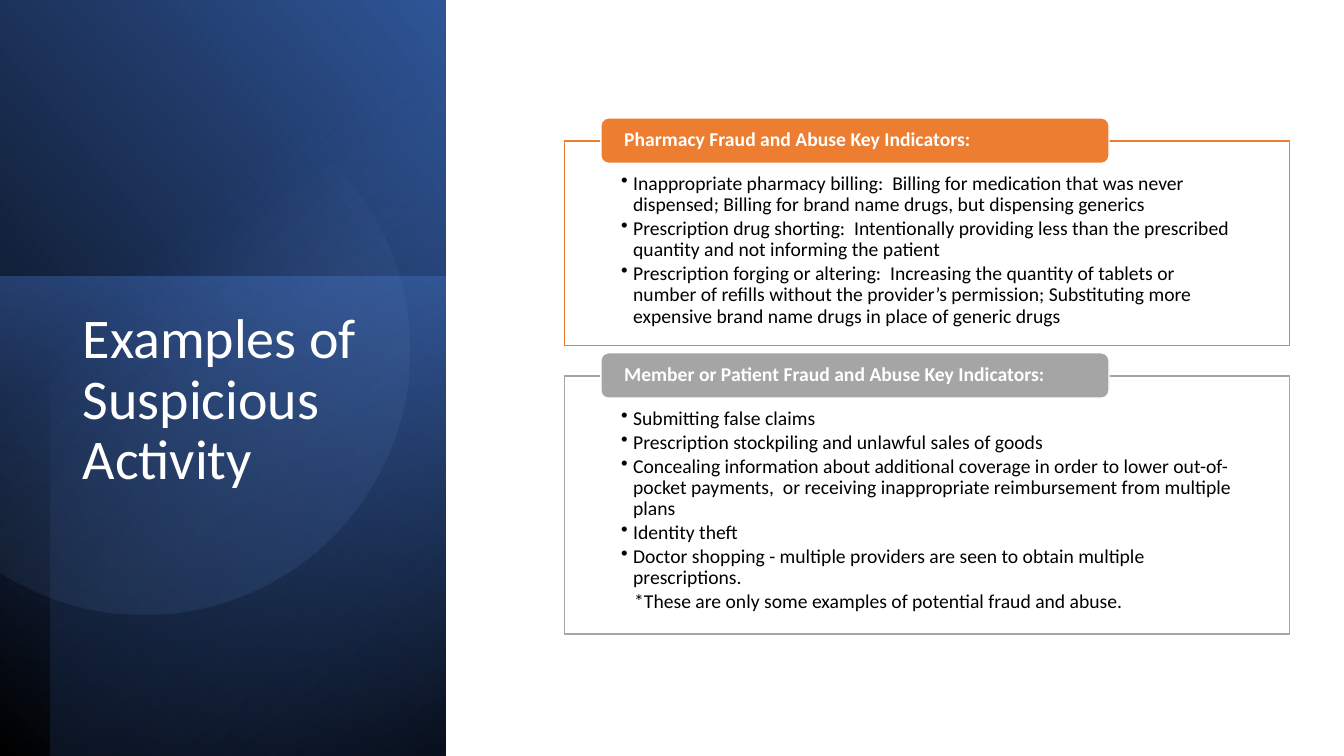
from math import acos, cos, sin

from pptx import Presentation
from pptx.dml.color import RGBColor
from pptx.enum.shapes import MSO_SHAPE
from pptx.enum.text import MSO_ANCHOR, PP_ALIGN
from pptx.oxml import parse_xml
from pptx.oxml.ns import nsdecls, qn
from pptx.util import Inches, Pt

RECT, ROUNDED = MSO_SHAPE.RECTANGLE, MSO_SHAPE.ROUNDED_RECTANGLE
TOP, MIDDLE, LEFT = MSO_ANCHOR.TOP, MSO_ANCHOR.MIDDLE, PP_ALIGN.LEFT
WHITE = RGBColor(0xFF, 0xFF, 0xFF)
BLACK = RGBColor(0x00, 0x00, 0x00)
ORANGE = RGBColor(0xED, 0x7D, 0x31)
GRAY = RGBColor(0xA5, 0xA5, 0xA5)
NAVY = RGBColor(0x20, 0x38, 0x64)
DEEP_BLUE = RGBColor(0x2F, 0x55, 0x97)
BLUE = RGBColor(0x44, 0x72, 0xC4)
PALE_BLUE = RGBColor(0x8F, 0xAA, 0xDC)


def fill_gradient(shape, stops, angle):
    """Stops are (position %, colour, opacity %); the angle is in degrees."""
    shape.shadow.inherit = False
    shape.line.fill.background()
    shape.fill.background()
    stop_xml = "".join(
        f'<a:gs pos="{pos * 1000}"><a:srgbClr val="{color}">'
        f'<a:alpha val="{opacity * 1000}"/></a:srgbClr></a:gs>'
        for pos, color, opacity in stops)
    gradient = parse_xml(
        f'<a:gradFill {nsdecls("a")} rotWithShape="1"><a:gsLst>{stop_xml}</a:gsLst>'
        f'<a:lin ang="{round(angle * 60000)}" scaled="0"/></a:gradFill>')
    properties = shape._element.spPr
    properties.replace(properties.find(qn("a:noFill")), gradient)


def write_paragraph(paragraph, text, size, color, bold=False):
    paragraph.text = text
    paragraph.alignment = LEFT
    paragraph.line_spacing = 0.9
    font_format = {"name": "Calibri", "size": Pt(size), "bold": bold}
    for attribute, value in font_format.items():
        setattr(paragraph.runs[0].font, attribute, value)
    paragraph.runs[0].font.color.rgb = color


prs = Presentation()
prs.slide_width, prs.slide_height = Inches(13.33), Inches(7.5)
slide = prs.slides.add_slide(prs.slide_layouts[5])
shapes = slide.shapes

# Blue side panel: frame before turning, rotation, mirrored, stops, angle
side_layers = [
    ((-1.55, 1.55, 7.52, 4.42), 90, True,
     [(0, BLACK, 100), (100, DEEP_BLUE, 100)], 310),
    ((-0.17, 2.91, 4.76, 4.42), 270, False,
     [(0, BLUE, 50), (100, NAVY, 0)], 190),
    ((-1.29, 1.79, 7.5, 3.92), 270, True,
     [(0, BLACK, 59), (69, BLUE, 0)], 220),
]
for frame, rotation, mirrored, stops, angle in side_layers:
    layer = shapes.add_shape(RECT, *map(Inches, frame))
    layer.rotation = rotation
    if mirrored:
        layer._element.spPr.xfrm.set("flipH", "1")
    fill_gradient(layer, stops, angle)

# Translucent disc, cut off by the left edge of the slide
center_x, center_y, radius = 1.43, 3.47, 2.63
edge_angle = acos(-center_x / radius)
STEPS = 120
arc = []
for step in range(STEPS + 1):
    turn = edge_angle * (2 * step / STEPS - 1)
    arc.append((Inches(center_x + radius * cos(turn)),
                Inches(center_y + radius * sin(turn))))
outline = shapes.build_freeform(*arc[0])
outline.add_line_segments(arc[1:], close=True)
disc = outline.convert_to_shape()
fill_gradient(disc, [(39, PALE_BLUE, 0), (100, DEEP_BLUE, 26)], 51.6)

# Title, brought in front of the side panel
title = shapes.title
shapes._spTree.append(title._element)
title.left, title.top, title.width, title.height = map(Inches, (0.72, 3.03, 3.15, 3.36))
title.text_frame.word_wrap = True
title.text_frame.vertical_anchor = TOP
write_paragraph(title.text_frame.paragraphs[0], "Examples of Suspicious Activity", 40, WHITE)

# Indicator panels: top, height, colour, heading, bullets, closing note
panels = [
    (1.4, 2.03, ORANGE, "Pharmacy Fraud and Abuse Key Indicators:", [
        "Inappropriate pharmacy billing:  Billing for medication that was never dispensed; "
        "Billing for brand name drugs, but dispensing generics",
        "Prescription drug shorting:  Intentionally providing less than the prescribed "
        "quantity and not informing the patient",
        "Prescription forging or altering:  Increasing the quantity of tablets or number of "
        "refills without the provider’s permission; Substituting more expensive brand name "
        "drugs in place of generic drugs",
    ], None),
    (3.73, 2.56, GRAY, "Member or Patient Fraud and Abuse Key Indicators:", [
        "Submitting false claims",
        "Prescription stockpiling and unlawful sales of goods",
        "Concealing information about additional coverage in order to lower out-of-pocket "
        "payments,  or receiving inappropriate reimbursement from multiple plans",
        "Identity theft",
        "Doctor shopping - multiple providers are seen to obtain multiple prescriptions.",
    ], "*These are only some examples of potential fraud and abuse."),
]
body_format = {"word_wrap": True, "vertical_anchor": TOP,
               "margin_left": Inches(0.56), "margin_right": Inches(0.56),
               "margin_top": Inches(0.32), "margin_bottom": Inches(0.11)}
heading_format = {"word_wrap": True, "vertical_anchor": MIDDLE,
                  "margin_left": Inches(0.21), "margin_right": Inches(0.21),
                  "margin_top": 0, "margin_bottom": 0}

for top, height, color, heading, bullets, note in panels:
    body = shapes.add_shape(RECT, Inches(5.6), Inches(top), Inches(7.19), Inches(height))
    tab = shapes.add_shape(ROUNDED, Inches(5.96), Inches(top - 0.23), Inches(5.04), Inches(0.45))
    for part, fill, line, frame_format in ((body, WHITE, color, body_format),
                                           (tab, color, WHITE, heading_format)):
        part.shadow.inherit = False
        part.fill.solid()
        part.fill.fore_color.rgb = fill
        part.line.color.rgb = line
        part.line.width = Pt(1)
        for attribute, value in frame_format.items():
            setattr(part.text_frame, attribute, value)

    write_paragraph(tab.text_frame.paragraphs[0], heading, 14, WHITE, bold=True)

    entries = bullets + [note] if note else bullets
    for index, entry in enumerate(entries):
        frame = body.text_frame
        paragraph = frame.add_paragraph() if index else frame.paragraphs[0]
        write_paragraph(paragraph, entry, 14, BLACK)
        paragraph.level = 2 if entry == note else 1
        paragraph.space_after = Pt(2)
        indent = paragraph._p.get_or_add_pPr()
        indent.set("marL", str(Inches(0.25 if entry == note else 0.12)))
        indent.set("indent", str(Inches(-0.12)))
        bullet_xml = "<a:buNone {}/>" if entry == note else '<a:buChar {} char="•"/>'
        indent.append(parse_xml(bullet_xml.format(nsdecls("a"))))

prs.save("out.pptx")
